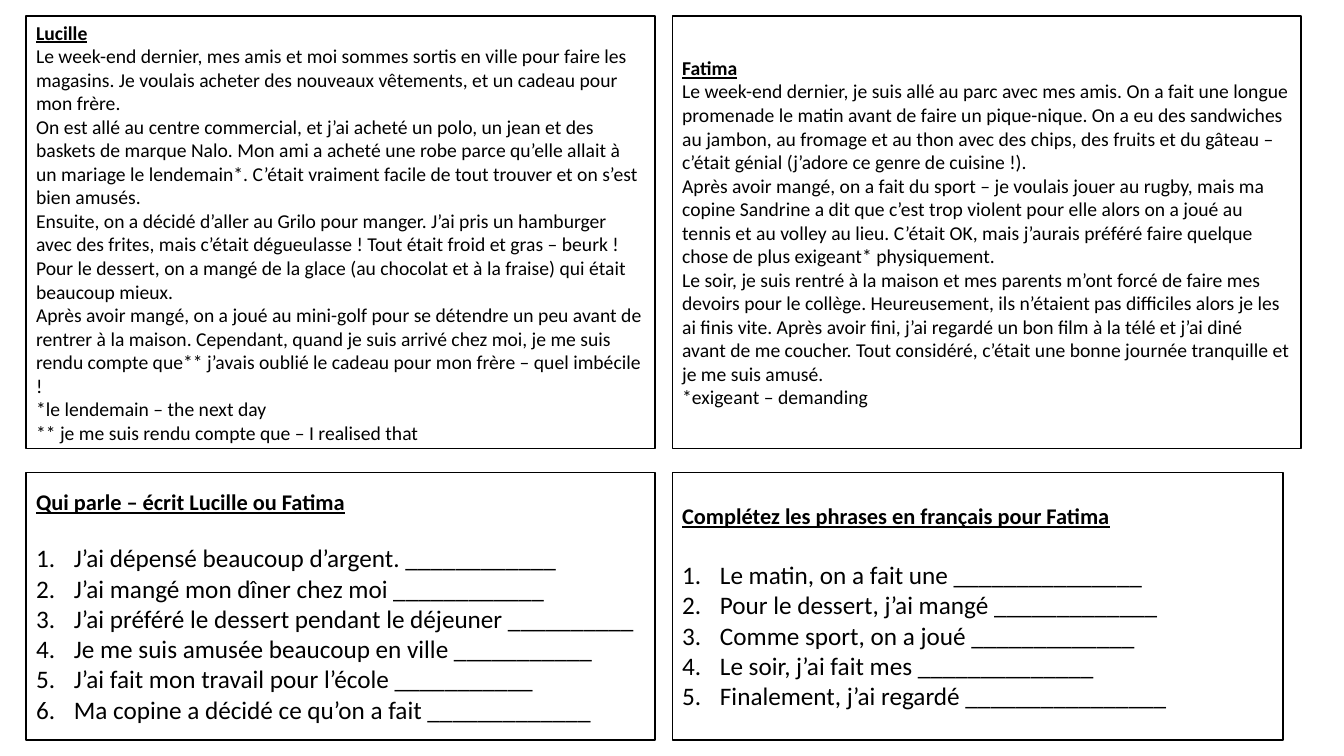
from lxml.etree import SubElement
from pptx import Presentation
from pptx.dml.color import RGBColor
from pptx.enum.shapes import MSO_SHAPE
from pptx.enum.text import MSO_ANCHOR, PP_ALIGN
from pptx.oxml.ns import qn
from pptx.util import Pt

LUCILLE_STORY = [
    "Le week-end dernier, mes amis et moi sommes sortis en ville pour faire les magasins. "
    "Je voulais acheter des nouveaux vêtements, et un cadeau pour mon frère.",
    "On est allé au centre commercial, et j’ai acheté un polo, un jean et des baskets de marque Nalo. "
    "Mon ami a acheté une robe parce qu’elle allait à un mariage le lendemain*. "
    "C’était vraiment facile de tout trouver et on s’est bien amusés.",
    "Ensuite, on a décidé d’aller au Grilo pour manger. J’ai pris un hamburger avec des frites, "
    "mais c’était dégueulasse ! Tout était froid et gras – beurk ! "
    "Pour le dessert, on a mangé de la glace (au chocolat et à la fraise) qui était beaucoup mieux.",
    "Après avoir mangé, on a joué au mini-golf pour se détendre un peu avant de rentrer à la maison. "
    "Cependant, quand je suis arrivé chez moi, je me suis rendu compte que** "
    "j’avais oublié le cadeau pour mon frère – quel imbécile !",
    "*le lendemain – the next day",
    "** je me suis rendu compte que – I realised that",
]
FATIMA_STORY = [
    "Le week-end dernier, je suis allé au parc avec mes amis. "
    "On a fait une longue promenade le matin avant de faire un pique-nique. "
    "On a eu des sandwiches au jambon, au fromage et au thon avec des chips, des fruits et du gâteau – "
    "c’était génial (j’adore ce genre de cuisine !).",
    "Après avoir mangé, on a fait du sport – je voulais jouer au rugby, "
    "mais ma copine Sandrine a dit que c’est trop violent pour elle alors on a joué au tennis "
    "et au volley au lieu. C’était OK, mais j’aurais préféré faire quelque chose "
    "de plus exigeant* physiquement.",
    "Le soir, je suis rentré à la maison et mes parents m’ont forcé de faire mes devoirs pour le collège. "
    "Heureusement, ils n’étaient pas difficiles alors je les ai finis vite. "
    "Après avoir fini, j’ai regardé un bon film à la télé et j’ai diné avant de me coucher. "
    "Tout considéré, c’était une bonne journée tranquille et je me suis amusé.",
    "*exigeant – demanding",
]
WHO_SPEAKS = [
    ("J’ai dépensé beaucoup d’argent.", 12),
    ("J’ai mangé mon dîner chez moi", 12),
    ("J’ai préféré le dessert pendant le déjeuner", 10),
    ("Je me suis amusée beaucoup en ville", 11),
    ("J’ai fait mon travail pour l’école", 11),
    ("Ma copine a décidé ce qu’on a fait", 13),
]
SENTENCES = [
    ("Le matin, on a fait une", 15),
    ("Pour le dessert, j’ai mangé", 13),
    ("Comme sport, on a joué", 13),
    ("Le soir, j’ai fait mes", 14),
    ("Finalement, j’ai regardé", 16),
]
LEFT, RIGHT = 18.7, 480.2
TOP, BOTTOM = 11.5, 337.7
STORY_HEIGHT, EXERCISE_HEIGHT = 308.9, 190.8
WIDTH, NARROW_WIDTH = 449.3, 436.3


def color(value):
    return RGBColor.from_string(value)


class Worksheet:
    """Draws framed reading texts and exercises on one slide."""

    font, ink, paper = "Calibri", "000000", "FFFFFF"
    indent = 27

    def __init__(self, slide):
        self.slide = slide

    def frame(self, left, top, width, height):
        box = self.slide.shapes.add_shape(
            MSO_SHAPE.RECTANGLE, Pt(left), Pt(top), Pt(width), Pt(height))
        box.shadow.inherit = False
        box.fill.solid()
        box.fill.fore_color.rgb = color(self.paper)
        box.line.color.rgb = color(self.ink)
        box.line.width = Pt(1)
        box.text_frame.word_wrap = True
        box.text_frame.vertical_anchor = MSO_ANCHOR.MIDDLE
        return box.text_frame

    def fill_line(self, paragraph, text, size, heading=False):
        paragraph.text = text
        paragraph.alignment = PP_ALIGN.LEFT
        for run in paragraph.runs:
            run.font.name = self.font
            run.font.size = Pt(size)
            run.font.color.rgb = color(self.ink)
            run.font.bold = run.font.underline = heading

    def number(self, paragraph):
        properties = paragraph._p.get_or_add_pPr()
        properties.set("marL", str(Pt(self.indent)))
        properties.set("indent", str(-Pt(self.indent)))
        SubElement(properties, qn("a:buFont"), typeface="+mj-lt")
        SubElement(properties, qn("a:buAutoNum"), type="arabicPeriod")

    def story(self, left, narrator, passages):
        frame = self.frame(left, TOP, WIDTH, STORY_HEIGHT)
        self.fill_line(frame.paragraphs[0], narrator, 14, heading=True)
        for passage in passages:
            self.fill_line(frame.add_paragraph(), passage, 14)

    def exercise(self, left, width, instruction, gap, questions):
        frame = self.frame(left, BOTTOM, width, EXERCISE_HEIGHT)
        heading = frame.paragraphs[0]
        self.fill_line(heading, instruction, 16, heading=True)
        heading.space_after = Pt(gap)
        for question, blank in questions:
            line = frame.add_paragraph()
            self.fill_line(line, f"{question} {'_' * blank}", 18)
            self.number(line)


def main():
    deck = Presentation()
    deck.slide_width, deck.slide_height = Pt(960), Pt(540)
    sheet = Worksheet(deck.slides.add_slide(deck.slide_layouts[6]))
    sheet.story(LEFT, "Lucille", LUCILLE_STORY)
    sheet.story(RIGHT, "Fatima", FATIMA_STORY)
    sheet.exercise(LEFT, WIDTH, "Qui parle – écrit Lucille ou Fatima", 19.5, WHO_SPEAKS)
    sheet.exercise(RIGHT, NARROW_WIDTH, "Complétez les phrases en français pour Fatima", 22, SENTENCES)
    deck.save("out.pptx")


if __name__ == "__main__":
    main()
